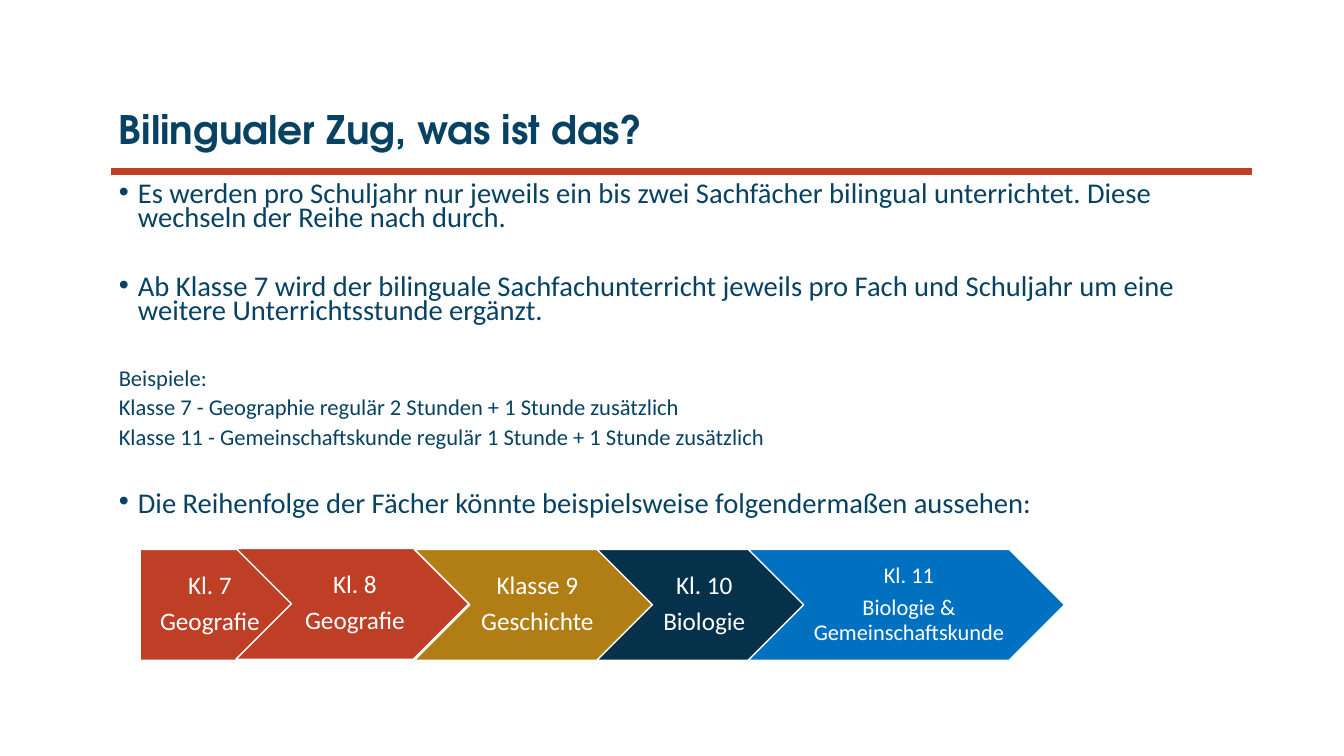
from lxml.etree import SubElement
from pptx import Presentation
from pptx.dml.color import RGBColor
from pptx.enum.shapes import MSO_CONNECTOR, MSO_SHAPE
from pptx.enum.text import MSO_ANCHOR, MSO_AUTO_SIZE, PP_ALIGN
from pptx.oxml.ns import qn
from pptx.util import Pt

PX = 9144  # EMU per px, 100 px to the inch
NAVY = RGBColor(0x07, 0x42, 0x63)
RED = RGBColor(0xBF, 0x3E, 0x26)
GOLD = RGBColor(0xB1, 0x7E, 0x15)
DARK = RGBColor(0x05, 0x31, 0x4A)
BLUE = RGBColor(0x00, 0x70, 0xC0)
WHITE = RGBColor(0xFF, 0xFF, 0xFF)


def px(*lengths):
    return [n * PX for n in lengths]


def write(p, text, font="Calibri", size=18, color=NAVY, bold=False,
          align=PP_ALIGN.LEFT, line=0.9, before=0, after=0, bullet=False):
    p.alignment = align
    p.line_spacing = line
    p.space_before, p.space_after = Pt(before), Pt(after)
    if bullet:
        pPr = p._p.get_or_add_pPr()
        pPr.set("marL", str(19 * PX))
        pPr.set("indent", str(-19 * PX))
        SubElement(pPr, qn("a:buFont")).set("typeface", "Arial")
        SubElement(pPr, qn("a:buChar")).set("char", "•")
    r = p.add_run()
    r.text = text
    r.font.name, r.font.size = font, Pt(size)
    r.font.bold, r.font.color.rgb = bold, color


class Slide:
    def __init__(self, prs):
        self.s = prs.slides.add_slide(prs.slide_layouts[5])

    def frame(self, sp, anchor):
        tf = sp.text_frame
        tf.word_wrap = True
        tf.auto_size = MSO_AUTO_SIZE.NONE
        tf.vertical_anchor = anchor
        return tf

    def paragraphs(self, tf, items):
        for i, (text, style) in enumerate(items):
            p = tf.add_paragraph() if i else tf.paragraphs[0]
            write(p, text, **style)

    def title(self, text, *box):
        sp = self.s.shapes.title
        sp.left, sp.top, sp.width, sp.height = px(*box)
        tf = self.frame(sp, MSO_ANCHOR.MIDDLE)
        write(tf.paragraphs[0], text, font="TeX Gyre Adventor", size=28, bold=True)

    def rule(self, x1, y1, x2, y2):
        line = self.s.shapes.add_connector(MSO_CONNECTOR.STRAIGHT, *px(x1, y1, x2, y2))
        line.line.color.rgb, line.line.width = RED, Pt(4.5)
        SubElement(line._element.spPr, qn("a:effectLst"))

    def text(self, items, *box):
        sp = self.s.shapes.add_textbox(*px(*box))
        self.paragraphs(self.frame(sp, MSO_ANCHOR.TOP), items)

    def arrow(self, kind, lines, fill, size, insets, *box):
        sp = self.s.shapes.add_shape(kind, *px(*box))
        sp.shadow.inherit = False
        sp.fill.solid()
        sp.fill.fore_color.rgb = fill
        sp.line.color.rgb, sp.line.width = WHITE, Pt(1)
        tf = self.frame(sp, MSO_ANCHOR.MIDDLE)
        tf.margin_left, tf.margin_right = px(*insets)
        style = dict(size=size, color=WHITE, align=PP_ALIGN.CENTER, after=0.35 * size)
        self.paragraphs(tf, [(text, style) for text in lines])


def main():
    prs = Presentation()
    prs.slide_width, prs.slide_height = px(1333, 750)
    slide = Slide(prs)

    # Heading
    slide.rule(110, 170, 1242, 170)
    slide.title("Bilingualer Zug, was ist das?", 108, 68, 751, 125)

    # Body text
    first = dict(size=20.4, line=0.7, bullet=True)
    point = dict(first, before=32.4)
    example = dict(size=16.1, line=0.7, before=7.5)
    slide.text([
        ("Es werden pro Schuljahr nur jeweils ein bis zwei Sachfächer bilingual "
         "unterrichtet. Diese wechseln der Reihe nach durch.", first),
        ("Ab Klasse 7 wird der bilinguale Sachfachunterricht jeweils pro Fach und "
         "Schuljahr um eine weitere Unterrichtsstunde ergänzt.", point),
        ("Beispiele:", dict(example, before=32.4)),
        ("Klasse 7 - Geographie regulär 2 Stunden + 1 Stunde zusätzlich", example),
        ("Klasse 11 - Gemeinschaftskunde regulär 1 Stunde + 1 Stunde zusätzlich", example),
        ("Die Reihenfolge der Fächer könnte beispielsweise folgendermaßen aussehen:", point),
    ], 108, 178, 1134, 373)

    # Sequence of subjects
    plate, chevron = MSO_SHAPE.PENTAGON, MSO_SHAPE.CHEVRON
    for kind, lines, fill, size, insets, x, y, w in [
        (plate, ("Kl. 7", "Geografie"), RED, 18, (10, 3), 139, 545, 159),
        (chevron, ("Kl. 8", "Geografie"), RED, 18, (8, 3), 234, 544, 231),
        (chevron, ("Klasse 9", "Geschichte"), GOLD, 18, (8, 3), 411, 545, 239),
        (chevron, ("Kl. 10", "Biologie"), DARK, 18, (8, 3), 592, 545, 208),
        (chevron, ("Kl. 11", "Biologie & Gemeinschaftskunde"), BLUE, 16, (7, 2),
         742, 545, 314),
    ]:
        slide.arrow(kind, lines, fill, size, insets, x, y, w, 110)

    prs.save("out.pptx")


if __name__ == "__main__":
    main()
